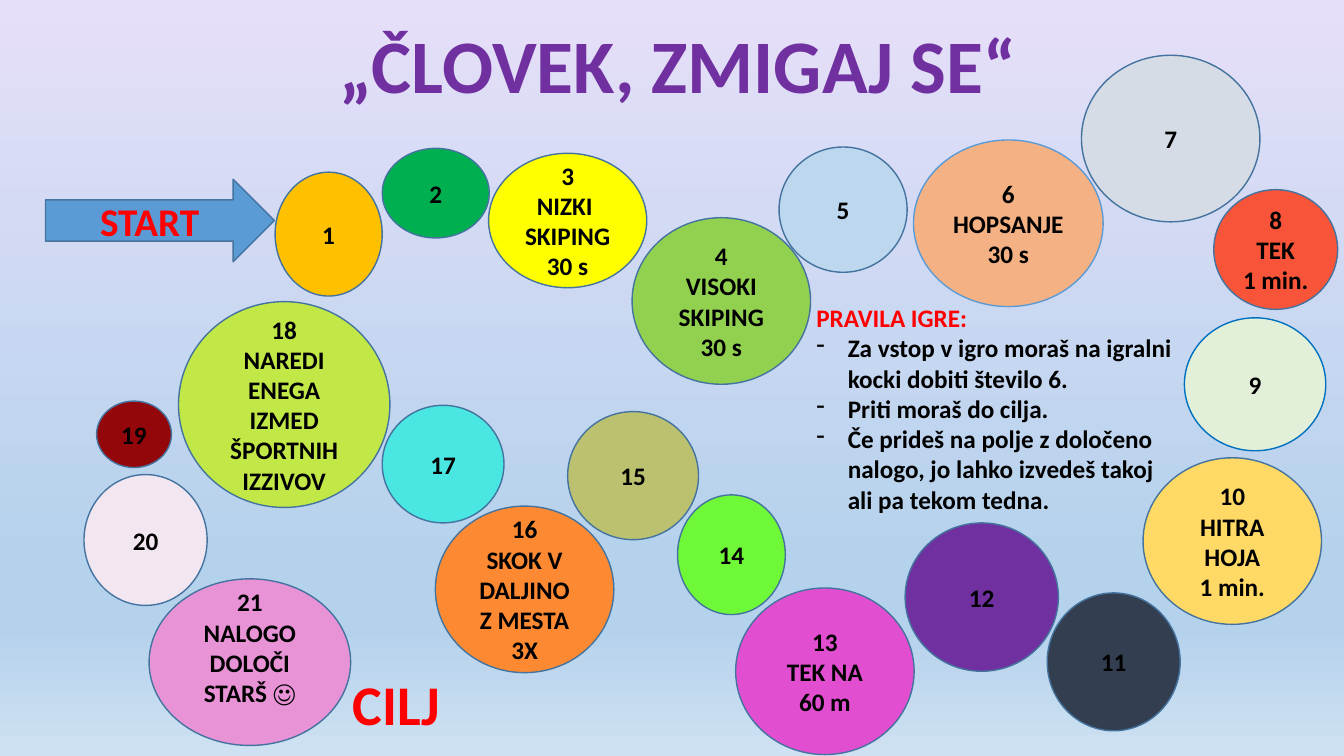
from lxml import etree
from pptx import Presentation
from pptx import util as u
from pptx.dml.color import RGBColor
from pptx.enum import shapes, text
from pptx.oxml import ns

FONT = "Calibri"
BLACK, RED, PURPLE = "000000", "FF0000", "7030A0"
BLUE, OUTLINE = "5B9BD5", "43739E"
SKY = [(0, "E6DFF9"), (74, "B5D2EC"), (83, "B5D2EC"), (100, "CEE1F2")]

# Fields in playing order: box (left, top, width, height), fill, task lines
FIELDS = [
    ((196.5, 123, 76.5, 88.5), "FFC000", []),
    ((273, 106, 76.5, 64), "00B050", []),
    ((349, 109.5, 113, 96), "FFFF00", ["NIZKI ", "SKIPING", "30 s"]),
    ((451.5, 155.5, 127.5, 119), "92D050", ["VISOKI SKIPING 30 s"]),
    ((556.5, 105, 91.5, 89.5), "BDD7EE", []),
    ((652.5, 100, 135.5, 119), "F4B183", ["HOPSANJE", "30 s"]),
    ((772.5, 39.5, 127.5, 119), "D6DCE5", []),
    ((867, 135.5, 88.5, 85.5), "F75439", ["TEK", "1 min."]),
    ((846, 227, 101, 95), "E2F0D9", []),
    ((816.5, 327, 127.5, 119), "FFD966", ["HITRA HOJA", "1 min."]),
    ((748, 423.5, 95, 98.5), "333F50", []),
    ((646.5, 373.5, 109.5, 106), PURPLE, []),
    ((525.5, 420, 127.5, 119), "E24ED0", ["TEK NA 60 m"]),
    ((484, 353.5, 77, 85.5), "6FF838", []),
    ((405.5, 294, 93.5, 91.5), "BBC16F", []),
    ((311, 361.5, 127.5, 119), "FD8A33", ["SKOK V DALJINO Z MESTA", "3X"]),
    ((273, 289.5, 87, 84), "4AE6E2", []),
    ((127.5, 215.5, 151, 147), "C2E848",
     ["NAREDI", "ENEGA IZMED ŠPORTNIH IZZIVOV"]),
    ((69, 286.5, 53.5, 47.5), "93070A", []),
    ((60, 339, 88, 93.5), "F2E6F1", []),
    ((106.5, 413.5, 144, 119), "E993D7", ["NALOGO DOLOČI STARŠ ☺"]),
]
SPECIAL_OUTLINES = {6: BLUE, 9: "0070C0"}
RULES = [
    "Za vstop v igro moraš na igralni kocki dobiti število 6.",
    "Priti moraš do cilja.",
    "Če prideš na polje z določeno nalogo, jo lahko izvedeš takoj ali pa tekom tedna.",
]


def color(hex_value):
    return RGBColor.from_string(hex_value)


def points(box):
    return [u.Pt(value) for value in box]


def add_run(paragraph, wording, size, hex_value):
    run = paragraph.add_run()
    run.text = wording
    run.font.name = FONT
    run.font.size = u.Pt(size)
    run.font.bold = True
    run.font.color.rgb = color(hex_value)


def write(frame, lines, size, hex_value, align=text.PP_ALIGN.CENTER):
    frame.word_wrap = True
    for index, line in enumerate(lines):
        paragraph = frame.paragraphs[0] if index == 0 else frame.add_paragraph()
        paragraph.alignment = align
        add_run(paragraph, line, size, hex_value)


def add_dash(paragraph, indent):
    properties = paragraph._p.get_or_add_pPr()
    properties.set("marL", str(u.Pt(indent)))
    properties.set("indent", str(-u.Pt(indent)))
    etree.SubElement(properties, ns.qn("a:buFontTx"))
    etree.SubElement(properties, ns.qn("a:buChar")).set("char", "-")


def paint_background(slide):
    fill = slide.background.fill
    fill.gradient()
    fill.gradient_angle = 270
    stops = slide.background._cSld.find(".//" + ns.qn("a:gsLst"))
    for stop in list(stops):
        stops.remove(stop)
    for percent, hex_value in SKY:
        stop = etree.SubElement(stops, ns.qn("a:gs"), pos=str(percent * 1000))
        etree.SubElement(stop, ns.qn("a:srgbClr"), val=hex_value)


def place_title(slide, box):
    title = slide.shapes.title
    title.left, title.top, title.width, title.height = points(box)
    frame = title.text_frame
    frame.auto_size = text.MSO_AUTO_SIZE.NONE
    frame.vertical_anchor = text.MSO_ANCHOR.TOP
    write(frame, ["„ČLOVEK, ZMIGAJ SE“"], 54, PURPLE)


def add_figure(slide, preset, box, fill, outline, lines, size, hex_value):
    shape = slide.shapes.add_shape(preset, *points(box))
    shape.shadow.inherit = False
    shape.fill.solid()
    shape.fill.fore_color.rgb = color(fill)
    shape.line.color.rgb = color(outline)
    shape.line.width = u.Pt(1)
    shape.text_frame.vertical_anchor = text.MSO_ANCHOR.MIDDLE
    write(shape.text_frame, lines, size, hex_value)
    return shape


def add_board(slide):
    for number, (box, fill, task) in enumerate(FIELDS, start=1):
        outline = SPECIAL_OUTLINES.get(number, OUTLINE)
        field = add_figure(slide, shapes.MSO_SHAPE.OVAL, box, fill, outline,
                           [str(number)] + task, 18, BLACK)
    # The last field carries its text one line higher
    field.text_frame.margin_bottom = u.Pt(25)


def add_finish(slide, box):
    label = slide.shapes.add_textbox(*points(box))
    write(label.text_frame, ["CILJ"], 40, RED, text.PP_ALIGN.LEFT)


def add_rules(slide, box):
    frame = slide.shapes.add_textbox(*points(box)).text_frame
    frame.margin_right = u.Pt(12)
    write(frame, ["PRAVILA IGRE:"], 18, RED, text.PP_ALIGN.LEFT)
    for rule in RULES:
        paragraph = frame.add_paragraph()
        add_dash(paragraph, 22.5)
        add_run(paragraph, rule, 18, BLACK)


def main():
    presentation = Presentation()
    presentation.slide_width, presentation.slide_height = u.Pt(960), u.Pt(540)
    slide = presentation.slides.add_slide(presentation.slide_layouts[5])
    paint_background(slide)
    place_title(slide, (96, 9.5, 777, 72.5))
    # Start arrow
    add_figure(slide, shapes.MSO_SHAPE.RIGHT_ARROW, (32.5, 128, 163.5, 59),
               BLUE, OUTLINE, ["START"], 28, RED)
    add_board(slide)
    add_finish(slide, (245, 474.5, 179, 55.5))
    add_rules(slide, (576, 212.5, 277, 160))
    presentation.save("out.pptx")


if __name__ == "__main__":
    main()
